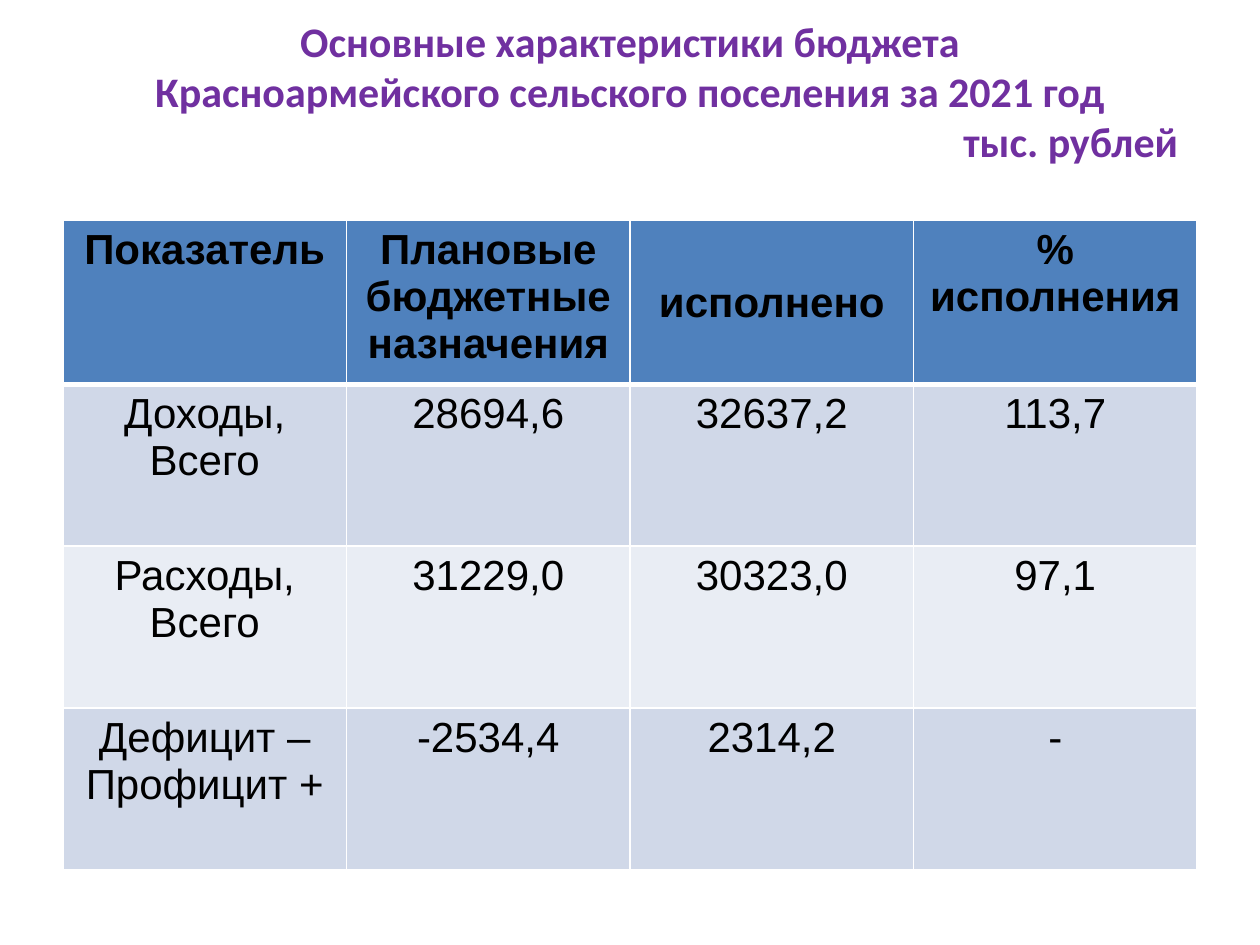
from lxml import etree
from pptx import Presentation
from pptx.dml.color import RGBColor
from pptx.enum.text import MSO_ANCHOR, PP_ALIGN
from pptx.oxml.ns import qn
from pptx.util import Inches, Pt

CENTER, RIGHT = PP_ALIGN.CENTER, PP_ALIGN.RIGHT
TOP, MIDDLE = MSO_ANCHOR.TOP, MSO_ANCHOR.MIDDLE
BLANK_LAYOUT = 6

PURPLE = RGBColor(0x70, 0x30, 0xA0)
BLACK = RGBColor(0x00, 0x00, 0x00)
WHITE = RGBColor(0xFF, 0xFF, 0xFF)
HEADER_BLUE = RGBColor(0x4F, 0x81, 0xBD)
BANDS = (RGBColor(0xE9, 0xED, 0xF4), RGBColor(0xD0, 0xD8, 0xE8))

TITLE_LINES = (
    ("Основные характеристики бюджета", CENTER),
    ("Красноармейского сельского поселения за 2021 год", CENTER),
    ("тыс. рублей", RIGHT),
)
BUDGET_ROWS = (
    ("Показатель", "Плановые бюджетные назначения", "исполнено", "%\nисполнения"),
    ("Доходы,\nВсего", "28694,6", "32637,2", "113,7"),
    ("Расходы,\nВсего", "31229,0", "30323,0", "97,1"),
    ("Дефицит –\nПрофицит +", "-2534,4", "2314,2", "-"),
)
EXECUTED_COLUMN = 2


def write_lines(frame, lines, font_name, color, bold):
    """Fill a text frame with one paragraph per (text, alignment) pair."""
    frame.word_wrap = True
    for index, (text, alignment) in enumerate(lines):
        para = frame.add_paragraph() if index else frame.paragraphs[0]
        para.alignment = alignment
        span = para.add_run()
        span.text = text
        span.font.name = font_name
        span.font.size = Pt(24)
        span.font.bold = bold
        span.font.color.rgb = color


def add_title(page):
    """Add the heading with the unit of measure at the right."""
    box = page.shapes.add_textbox(Inches(0.5), Inches(0.12), Inches(9), Inches(1.22))
    frame = box.text_frame
    frame.margin_top = frame.margin_bottom = 0
    frame.margin_left = frame.margin_right = Inches(0.15)
    frame.vertical_anchor = TOP
    write_lines(frame, TITLE_LINES, "Calibri", PURPLE, True)


def set_borders(cell, widths):
    """Draw white cell borders with the given width in points per side."""
    properties = cell._tc.get_or_add_tcPr()
    for side, width in widths.items():
        line = etree.SubElement(properties, qn(f"a:ln{side}"), w=str(Pt(width)))
        fill = etree.SubElement(line, qn("a:solidFill"))
        etree.SubElement(fill, qn("a:srgbClr"), val=str(WHITE))


def style_cell(cell, text, row):
    """Write one table cell with its borders, band fill and text."""
    header = row == 0
    set_borders(cell, {"L": 1, "R": 1, "T": 3 if row == 1 else 1, "B": 3 if header else 1})
    cell.fill.solid()
    cell.fill.fore_color.rgb = HEADER_BLUE if header else BANDS[row % 2]
    lines = [(line, CENTER) for line in text.split("\n")]
    write_lines(cell.text_frame, lines, "Arial", BLACK, header)


def add_budget_table(page):
    """Add the table of planned and executed budget figures."""
    rows, columns = len(BUDGET_ROWS), len(BUDGET_ROWS[0])
    table = page.shapes.add_table(
        rows, columns, Inches(0.5), Inches(1.75), Inches(9), Inches(5.14)
    ).table
    for row, texts in enumerate(BUDGET_ROWS):
        for column, text in enumerate(texts):
            style_cell(table.cell(row, column), text, row)
    table.cell(0, EXECUTED_COLUMN).vertical_anchor = MIDDLE


def main():
    """Build the budget slide and save it."""
    deck = Presentation()
    deck.slide_width, deck.slide_height = Inches(10), Inches(7.5)
    page = deck.slides.add_slide(deck.slide_layouts[BLANK_LAYOUT])
    add_title(page)
    add_budget_table(page)
    deck.save("out.pptx")


if __name__ == "__main__":
    main()
